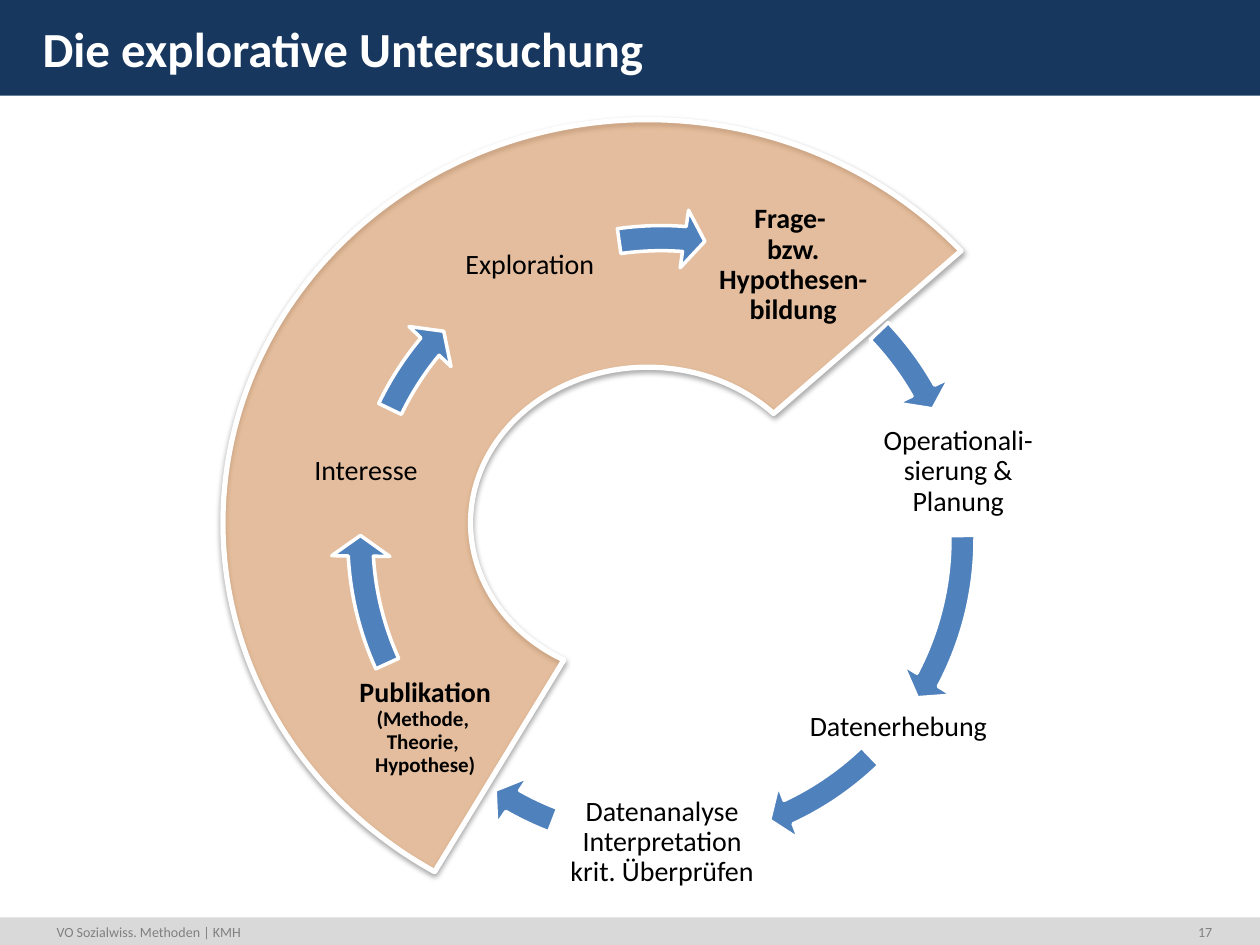
from copy import deepcopy

from lxml.etree import SubElement
from pptx import Presentation
from pptx.dml.color import RGBColor
from pptx.enum.shapes import MSO_SHAPE
from pptx.enum.text import MSO_ANCHOR, PP_ALIGN
from pptx.oxml.ns import qn
from pptx.util import Inches, Pt

COLORS = {
    "navy": "17375E", "footer": "D9D9D9", "grey": "808080", "white": "FFFFFF",
    "black": "000000", "orange": "F79646", "blue": "4F81BD",
}
FONT = "Calibri"

BARS = [((0, 7.28, 10, 0.22), "footer"), ((0, 0, 10, 0.76), "navy")]

# box, text, size, colour, bold, alignment
LABELS = [
    ((0.35, 7.28, 2.99, 0.24), "VO Sozialwiss. Methoden | KMH", 8, "grey", False, PP_ALIGN.LEFT),
    ((9.3, 7.28, 0.42, 0.24), "17", 8, "grey", False, PP_ALIGN.RIGHT),
    ((0.24, 0.1, 9.44, 0.5), "Die explorative Untersuchung", 28, "white", True, PP_ALIGN.LEFT),
]

PHASE_ARC = (1.77, 0.95, 6.74, 6.4)
ARC_ANGLES = (121.4, 319.05)
CYCLE = (2.63, 1.66, 5.24, 5.24)

# box, text, bold, start and end angle of the arrow to the next step
STEPS = [
    ((5.6, 1.6, 1.39, 1.01), "Frage- \nbzw. Hypothesen-\nbildung", True, 316.31, 330.44),
    ((6.51, 3.24, 2.19, 1.01), "Operationali-\nsierung &\nPlanung", False, 359.3, 27.85),
    ((6.37, 5.54, 1.52, 0.47), "Datenerhebung", False, 46.1, 65.01),
    ((4.39, 6.18, 1.73, 1.01), "Datenanalyse Interpretation\nkrit. Überprüfen", False,
     111.08, 119.6),
    ((2.23, 5.27, 2.29, 1.01), "Publikation\n(Methode, \nTheorie, \nHypothese)", True,
     155.59, 176.79),
    ((2.4, 3.24, 1.01, 1.01), "Interesse", False, 205.64, 219.77),
    ((3.5, 1.6, 1.41, 1.01), "Exploration", False, 261.92, 274.37),
]
SMALL_STEP = "Publikation"


def color(name):
    return RGBColor.from_string(COLORS[name])


def angle(degrees):
    """Adjustment value of an angle: 60000 units a degree, scaled by 100000."""
    return degrees * 0.6


def add_preset(shapes, kind, box, fill, adjustments=(), line_width=None):
    sp = shapes.add_shape(kind, *map(Inches, box))
    sp.shadow.inherit = False
    for i, value in enumerate(adjustments):
        sp.adjustments[i] = value
    sp.fill.solid()
    sp.fill.fore_color.rgb = color(fill)
    if line_width:
        sp.line.color.rgb = color("white")
        sp.line.width = Pt(line_width)
    else:
        sp.line.fill.background()
    return sp


def add_label(shapes, box, text, size, fill, bold, align):
    sp = shapes.add_textbox(*map(Inches, box))
    tf = sp.text_frame
    tf.word_wrap = True
    p = tf.paragraphs[0]
    p.text = text
    p.alignment = align
    for r in p.runs:
        r.font.name = FONT
        r.font.size = Pt(size)
        r.font.bold = bold
        r.font.color.rgb = color(fill)
    return tf


def match_breaks(p):
    """Give each line break the format of the run before it."""
    for br in p._p.findall(qn("a:br")):
        br.append(deepcopy(br.getprevious().find(qn("a:rPr"))))


def add_step(shapes, box, text, bold):
    tf = add_label(shapes, box, text, 16, "black", bold, PP_ALIGN.CENTER)
    tf.vertical_anchor = MSO_ANCHOR.MIDDLE
    tf.margin_left = tf.margin_right = tf.margin_top = tf.margin_bottom = Inches(0.02)
    p = tf.paragraphs[0]
    p.line_spacing = 0.9
    if text.startswith(SMALL_STEP):
        for r in p.runs[1:]:
            r.font.size = Pt(12)
    match_breaks(p)


def add_phase_arc(shapes):
    start, end = map(angle, ARC_ANGLES)
    sp = add_preset(shapes, MSO_SHAPE.BLOCK_ARC, PHASE_ARC, "orange", (start, end, 0.307), 3)
    props = sp._element.spPr
    fill = props.find(qn("a:solidFill")).find(qn("a:srgbClr"))
    SubElement(fill, qn("a:alpha"), val="40000")
    shadow = SubElement(props.find(qn("a:effectLst")), qn("a:outerShdw"), blurRad="40000",
                        dist="20000", dir="5400000", rotWithShape="0")
    shade = SubElement(shadow, qn("a:srgbClr"), val=COLORS["black"])
    SubElement(shade, qn("a:alpha"), val="38000")


def main():
    prs = Presentation()
    prs.slide_width, prs.slide_height = Inches(10), Inches(7.5)
    s = prs.slides.add_slide(prs.slide_layouts[6])

    for box, fill in BARS:
        add_preset(s.shapes, MSO_SHAPE.RECTANGLE, box, fill)
    for label in LABELS:
        add_label(s.shapes, *label)
    add_phase_arc(s.shapes)

    cycle = s.shapes.add_group_shape()
    for box, text, bold, start, end in STEPS:
        add_step(cycle.shapes, box, text, bold)
        add_preset(cycle.shapes, MSO_SHAPE.CIRCULAR_ARROW, CYCLE, "blue",
                   (0.038, angle(3.92), angle(end), angle(start), 0.044), 2)

    prs.save("out.pptx")


if __name__ == "__main__":
    main()
